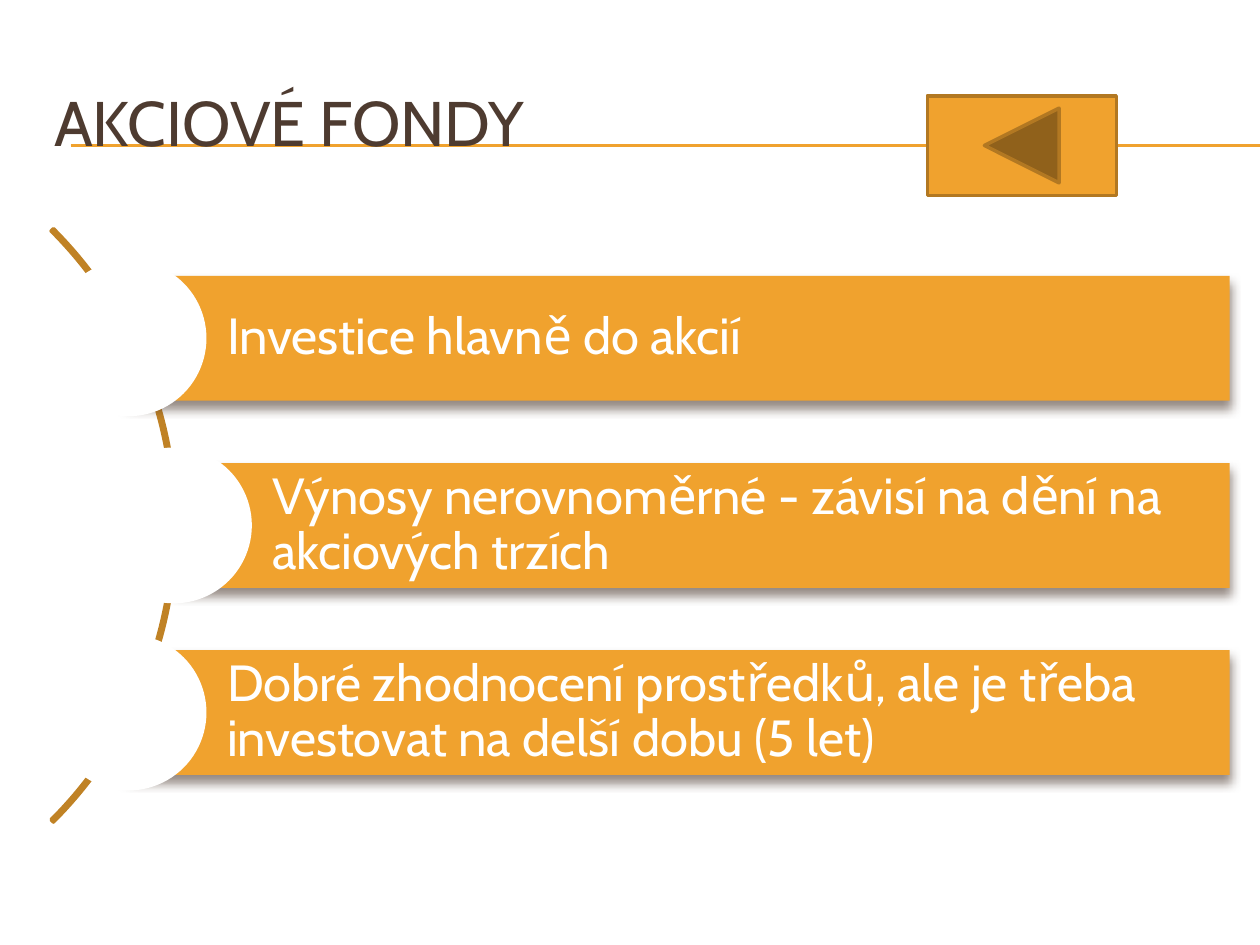
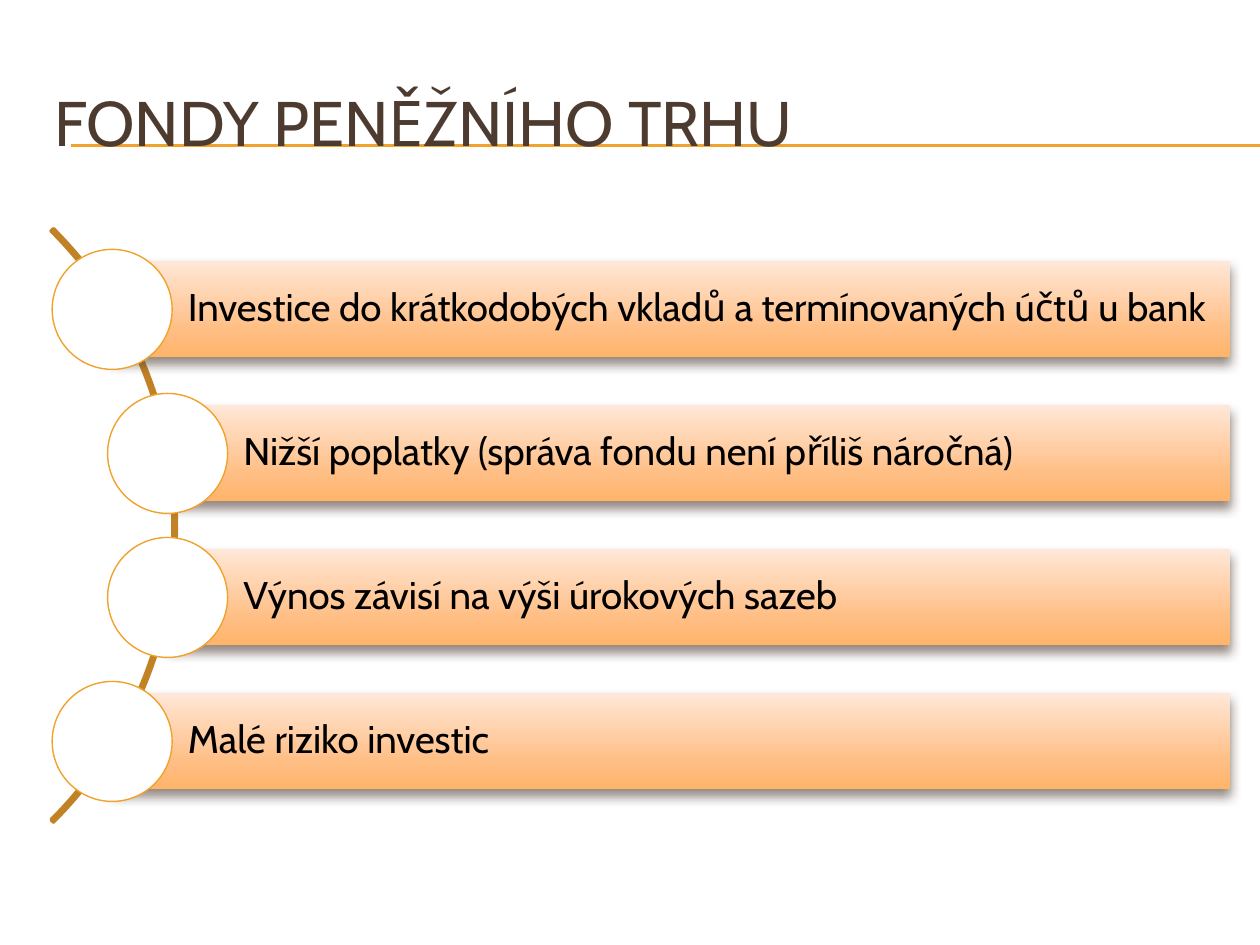
from dataclasses import dataclass

from lxml.etree import SubElement
from pptx import Presentation
from pptx.dml.color import RGBColor
from pptx.enum.shapes import MSO_CONNECTOR, MSO_SHAPE
from pptx.enum.text import MSO_ANCHOR, PP_ALIGN
from pptx.oxml.ns import qn
from pptx.shapes.autoshape import Shape
from pptx.slide import Slide
from pptx.text.text import TextFrame
from pptx.util import Inches, Pt

FONT = "Cabin"
ORANGE = RGBColor(0xF0, 0xA2, 0x2E)
ARC_BROWN = RGBColor(0xC0, 0x82, 0x25)
BUTTON_EDGE = RGBColor(0xB2, 0x78, 0x22)
DARK_BROWN = RGBColor(0x4E, 0x3B, 0x30)
WHITE = RGBColor(0xFF, 0xFF, 0xFF)
BLACK = RGBColor(0x00, 0x00, 0x00)
PEACH_STOPS = (
    (0, RGBColor(0xFF, 0xE7, 0xD7)),
    (72, RGBColor(0xFF, 0xBE, 0x84)),
    (100, RGBColor(0xFF, 0xB4, 0x68)),
)

# Geometry of the curved list, in inches
LIST_MIDDLE = 4.17
BAR_RIGHT = 9.76
ARC_CENTER_X = -1.93
ARC_RADIUS = 3.33


@dataclass(frozen=True)
class Bar:
    left: float
    text: str


@dataclass(frozen=True)
class CurvedList:
    title: str
    pitch: float
    font_size: int
    text_color: RGBColor
    gradient: bool
    circle_outline: bool
    back_button: bool
    bars: tuple[Bar, ...]


FUNDS = (
    CurvedList(
        "AKCIOVÉ FONDY", 1.485, 29, WHITE, False, False, True,
        (
            Bar(1.02, "Investice hlavně do akcií"),
            Bar(1.38, "Výnosy nerovnoměrné - závisí na dění na akciových trzích"),
            Bar(1.02, "Dobré zhodnocení prostředků, ale je třeba "
                      "investovat na delší dobu (5 let)"),
        ),
    ),
    CurvedList(
        "FONDY PENĚŽNÍHO TRHU", 1.143, 22, BLACK, True, True, False,
        (
            Bar(0.89, "Investice do krátkodobých vkladů a termínovaných účtů u bank"),
            Bar(1.33, "Nižší poplatky (správa fondu není příliš náročná)"),
            Bar(1.33, "Výnos závisí na výši úrokových sazeb"),
            Bar(0.89, "Malé riziko investic"),
        ),
    ),
)


def add_plain_shape(slide: Slide, kind: MSO_SHAPE, left: float, top: float,
                    width: float, height: float, fill: RGBColor | None = None,
                    line: RGBColor | None = None, line_width: float = 2) -> Shape:
    shape = slide.shapes.add_shape(
        kind, Inches(left), Inches(top), Inches(width), Inches(height))
    if fill is None:
        shape.fill.background()
    else:
        shape.fill.solid()
        shape.fill.fore_color.rgb = fill
    if line is None:
        shape.line.fill.background()
    else:
        shape.line.color.rgb = line
        shape.line.width = Pt(line_width)
    shape.shadow.inherit = False
    return shape


def write_text(frame: TextFrame, text: str, size: float, color: RGBColor,
               line_spacing: float) -> None:
    frame.word_wrap = True
    frame.vertical_anchor = MSO_ANCHOR.MIDDLE
    paragraph = frame.paragraphs[0]
    paragraph.alignment = PP_ALIGN.LEFT
    paragraph.line_spacing = line_spacing
    run = paragraph.add_run()
    run.text = text
    run.font.name = FONT
    run.font.size = Pt(size)
    run.font.color.rgb = color


def add_drop_shadow(shape: Shape) -> None:
    effects = shape.element.spPr.find(qn("a:effectLst"))
    shadow = SubElement(effects, qn("a:outerShdw"), blurRad=str(Pt(6)),
                        dist=str(Pt(4)), dir="5400000", rotWithShape="0")
    color = SubElement(shadow, qn("a:srgbClr"), val=str(DARK_BROWN))
    SubElement(color, qn("a:alpha"), val="60000")


def apply_peach_gradient(shape: Shape) -> None:
    shape.fill.gradient()
    shape.fill.gradient_angle = 270
    stops = shape.element.spPr.find(".//" + qn("a:gsLst"))
    for stop in list(stops):
        stops.remove(stop)
    for percent, color in PEACH_STOPS:
        stop = SubElement(stops, qn("a:gs"), pos=str(percent * 1000))
        SubElement(stop, qn("a:srgbClr"), val=str(color))


def add_title(slide: Slide, text: str) -> None:
    title = slide.shapes.title
    title.left, title.top = Inches(0.33), Inches(0.5)
    title.width, title.height = Inches(9.5), Inches(0.92)
    write_text(title.text_frame, text, 36, DARK_BROWN, 1.0)


def move_rules_to_layout(slide: Slide) -> None:
    """Draw the double title rule and keep it in the shared layout."""
    layout_tree = slide.slide_layout.shapes.element
    for y in (1.15, 1.16):
        rule = slide.shapes.add_connector(
            MSO_CONNECTOR.STRAIGHT, Inches(0.56), Inches(y), Inches(10), Inches(y))
        rule.line.color.rgb = ORANGE
        rule.line.width = Pt(0.75)
        SubElement(rule.element.spPr, qn("a:effectLst"))
        layout_tree.insert(2, rule.element)


def add_arc(slide: Slide) -> None:
    arc = add_plain_shape(
        slide, MSO_SHAPE.BLOCK_ARC, ARC_CENTER_X - ARC_RADIUS,
        LIST_MIDDLE - ARC_RADIUS, 2 * ARC_RADIUS, 2 * ARC_RADIUS, line=ARC_BROWN)
    for index, value in enumerate((189, 27, 0.004)):
        arc.adjustments[index] = value


def add_bars(slide: Slide, fund: CurvedList) -> None:
    height = fund.pitch * 2 / 3
    diameter = height * 1.25
    first_center = LIST_MIDDLE - fund.pitch * (len(fund.bars) - 1) / 2
    for index, bar in enumerate(fund.bars):
        center = first_center + index * fund.pitch

        # Bar with its text
        box = add_plain_shape(slide, MSO_SHAPE.RECTANGLE, bar.left,
                              center - height / 2, BAR_RIGHT - bar.left,
                              height, ORANGE)
        if fund.gradient:
            apply_peach_gradient(box)
        add_drop_shadow(box)
        frame = box.text_frame
        frame.margin_left = Inches(height * 0.79)
        frame.margin_right = frame.margin_top = frame.margin_bottom = Inches(height * 0.08)
        write_text(frame, bar.text, fund.font_size, fund.text_color, 0.9)

        # Circle centred on the left end of the bar
        add_plain_shape(slide, MSO_SHAPE.OVAL, bar.left - diameter / 2,
                        center - diameter / 2, diameter, diameter, WHITE,
                        ORANGE if fund.circle_outline else None, 0.79)


def main() -> None:
    presentation = Presentation()
    presentation.slide_width, presentation.slide_height = Inches(10), Inches(7.5)
    title_only = presentation.slide_layouts[5]
    for index, fund in enumerate(FUNDS):
        slide = presentation.slides.add_slide(title_only)
        if index == 0:
            move_rules_to_layout(slide)
        add_title(slide, fund.title)
        add_arc(slide)
        add_bars(slide, fund)
        if fund.back_button:
            add_plain_shape(slide, MSO_SHAPE.ACTION_BUTTON_BACK_OR_PREVIOUS,
                            7.36, 0.76, 1.5, 0.79, ORANGE, BUTTON_EDGE)
    presentation.save("out.pptx")


if __name__ == "__main__":
    main()
